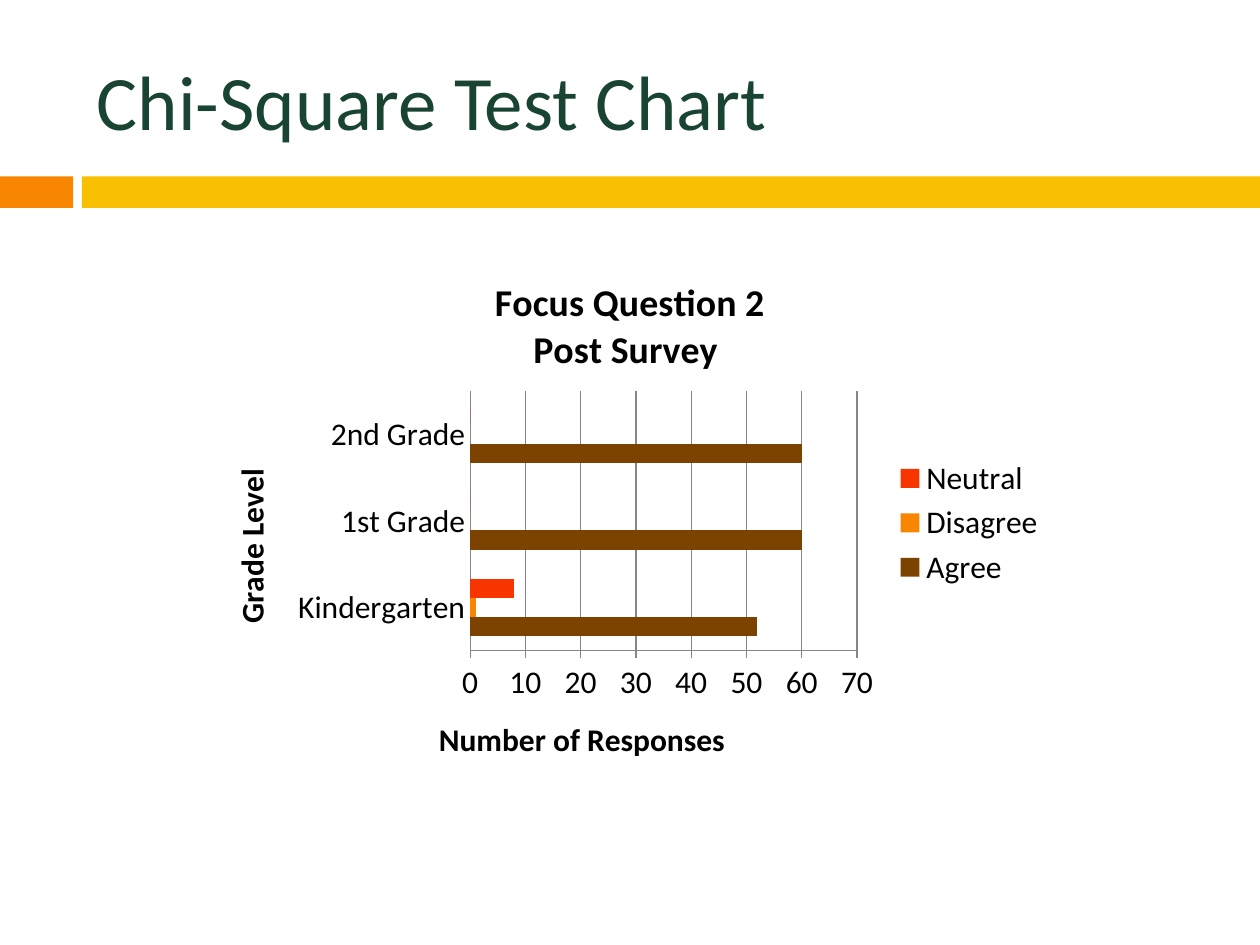
from dataclasses import dataclass

import pptx
import pptx.chart.data
import pptx.dml.color
import pptx.enum.chart
import pptx.enum.shapes
import pptx.enum.text
import pptx.util
from pptx.util import Inches

FONT = "Calibri"
COLORS = {
    "title": "194431",
    "text": "000000",
    "grid": "868686",
    "orange": "F88600",
    "yellow": "F8C000",
    "brown": "7C4300",
    "red": "F83500",
}


@dataclass(frozen=True)
class Band:
    left: float
    width: float
    color: str


@dataclass(frozen=True)
class Answer:
    name: str
    counts: tuple[int, ...]
    color: str


BANDS = (Band(0, 0.58, "orange"), Band(0.65, 9.35, "yellow"))
GRADES = ("Kindergarten", "1st Grade", "2nd Grade")
ANSWERS = (
    Answer("Agree", (52, 60, 60), "brown"),
    Answer("Disagree", (1, 0, 0), "orange"),
    Answer("Neutral", (8, 0, 0), "red"),
)


def rgb(color: str) -> pptx.dml.color.RGBColor:
    return pptx.dml.color.RGBColor.from_string(COLORS[color])


def style_font(font, size: float, color: str = "text", bold: bool = False) -> None:
    font.name = FONT
    font.size = pptx.util.Pt(size)
    font.bold = bold
    font.color.rgb = rgb(color)


def style_line(line) -> None:
    line.color.rgb = rgb("grid")
    line.width = pptx.util.Pt(0.75)


def draw_band(slide, band: Band) -> None:
    bar = slide.shapes.add_shape(
        pptx.enum.shapes.MSO_SHAPE.RECTANGLE,
        Inches(band.left), Inches(1.4), Inches(band.width), Inches(0.25),
    )
    bar.shadow.inherit = False
    bar.fill.solid()
    bar.fill.fore_color.rgb = rgb(band.color)
    bar.line.fill.background()


def draw_heading(slide, text: str) -> None:
    heading = slide.shapes.add_textbox(
        Inches(0.67), Inches(0.25), Inches(8.92), Inches(1.08)
    ).text_frame
    heading.word_wrap = True
    heading.vertical_anchor = pptx.enum.text.MSO_ANCHOR.MIDDLE
    run = heading.paragraphs[0].add_run()
    run.text = text
    style_font(run.font, 44, "title")


def write_title(owner, lines: tuple[str, ...], size: float) -> None:
    owner.has_title = True
    frame = (owner.chart_title if hasattr(owner, "chart_title") else owner.axis_title).text_frame
    for index, line in enumerate(lines):
        paragraph = frame.add_paragraph() if index else frame.paragraphs[0]
        run = paragraph.add_run()
        run.text = line
        style_font(run.font, size, bold=True)


def draw_survey(slide) -> None:
    survey = pptx.chart.data.CategoryChartData()
    survey.categories = GRADES
    for answer in ANSWERS:
        survey.add_series(answer.name, answer.counts)
    chart = slide.shapes.add_chart(
        pptx.enum.chart.XL_CHART_TYPE.BAR_CLUSTERED,
        Inches(1.6), Inches(2.03), Inches(6.8), Inches(4.24), survey,
    ).chart
    style_font(chart.font, 18)
    write_title(chart, ("Focus Question 2", "Post Survey "), 21.6)
    chart.chart_title.include_in_layout = False

    chart.has_legend = True
    chart.legend.position = pptx.enum.chart.XL_LEGEND_POSITION.RIGHT
    chart.legend.include_in_layout = False

    bars = chart.plots[0]
    bars.gap_width = 150
    bars.vary_by_categories = False
    for series, answer in zip(bars.series, ANSWERS):
        series.invert_if_negative = False
        series.format.fill.solid()
        series.format.fill.fore_color.rgb = rgb(answer.color)

    grades, responses = chart.category_axis, chart.value_axis
    write_title(grades, ("Grade Level",), 18)
    write_title(responses, ("Number of Responses ",), 18)
    grades.major_tick_mark = pptx.enum.chart.XL_TICK_MARK.NONE
    responses.major_tick_mark = pptx.enum.chart.XL_TICK_MARK.OUTSIDE
    responses.minimum_scale = 0
    responses.maximum_scale = 70
    responses.major_unit = 10
    responses.has_major_gridlines = True
    for line in (grades.format.line, responses.format.line, responses.major_gridlines.format.line):
        style_line(line)


def main() -> None:
    deck = pptx.Presentation()
    deck.slide_width = Inches(10)
    deck.slide_height = Inches(7.5)
    slide = deck.slides.add_slide(deck.slide_layouts[6])
    for band in BANDS:
        draw_band(slide, band)
    draw_heading(slide, "Chi-Square Test Chart")
    draw_survey(slide)
    deck.save("out.pptx")


if __name__ == "__main__":
    main()
